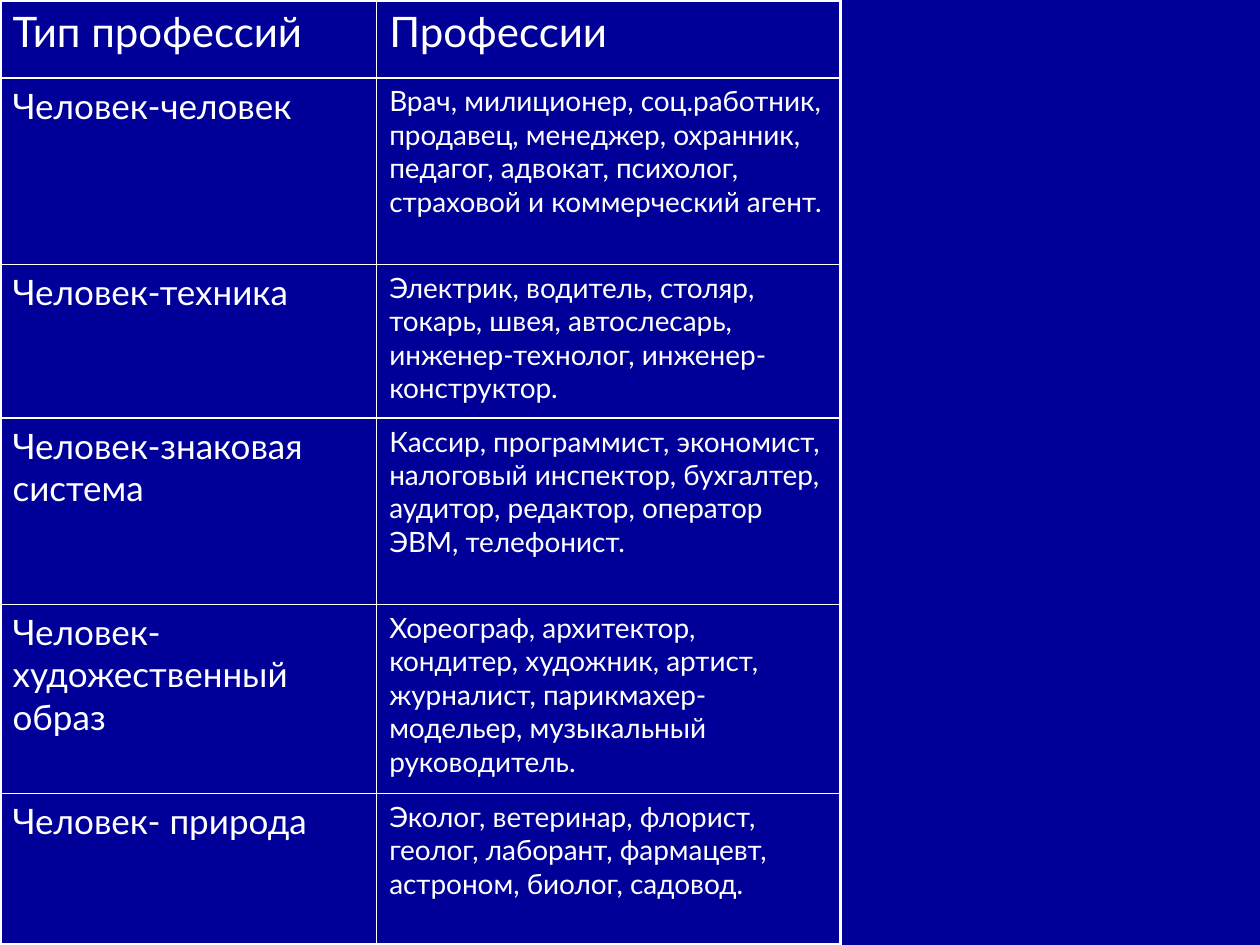
from lxml.etree import SubElement
from pptx import Presentation
from pptx.dml.color import RGBColor
from pptx.oxml.ns import qn
from pptx.util import Inches, Pt

NAVY = RGBColor(0x00, 0x00, 0x99)
WHITE = RGBColor(0xFF, 0xFF, 0xFF)

# The slide is a fine grid of 1000 columns by 750 rows
GRID_COLUMNS, GRID_ROWS = 1000, 750
COLUMN_WIDTHS = [299, 368]
ROW_HEIGHTS = [62, 148, 122, 148, 150, 120]

HEADER = ("Тип профессий", "Профессии")
PROFESSIONS = [
    ("Человек-человек",
     "Врач, милиционер, соц.работник, продавец, менеджер, охранник, "
     "педагог, адвокат, психолог, страховой и коммерческий агент."),
    ("Человек-техника",
     "Электрик, водитель, столяр, токарь, швея, автослесарь, "
     "инженер-технолог, инженер-конструктор."),
    ("Человек-знаковая система",
     "Кассир, программист, экономист, налоговый инспектор, бухгалтер, "
     "аудитор, редактор, оператор ЭВМ, телефонист."),
    ("Человек- художественный образ",
     "Хореограф, архитектор, кондитер, художник, артист, журналист, "
     "парикмахер-модельер, музыкальный руководитель."),
    ("Человек- природа",
     "Эколог, ветеринар, флорист, геолог, лаборант, фармацевт, "
     "астроном, биолог, садовод."),
]


class SlideBuilder:
    """Holds the style and the current slide."""

    font_name = "Lato"
    header_size = 24
    column_sizes = (20, 16)
    outer_line, inner_line = 2.25, 1

    def __init__(self, deck):
        self.column = deck.slide_width / GRID_COLUMNS
        self.row = deck.slide_height / GRID_ROWS
        self.page = deck.slides.add_slide(deck.slide_layouts[6])

    def background(self, color):
        fill = self.page.background.fill
        fill.solid()
        fill.fore_color.rgb = color

    def table(self, rows, widths, heights):
        frame = self.page.shapes.add_table(
            len(rows), len(widths), 0, 0,
            round(sum(widths) * self.column), round(sum(heights) * self.row))
        table = frame.table
        table.first_row = table.horz_banding = False
        for column, width in zip(table.columns, widths):
            column.width = round(width * self.column)
        for row, height in zip(table.rows, heights):
            row.height = round(height * self.row)

        last_row, last_column = len(rows) - 1, len(widths) - 1
        for i, texts in enumerate(rows):
            for j, text in enumerate(texts):
                cell = table.cell(i, j)
                size = self.header_size if i == 0 else self.column_sizes[j]
                self.cell_text(cell, text, size)
                self.cell_borders(cell, {
                    "L": j == 0, "R": j == last_column,
                    "T": i == 0, "B": i == last_row})
                cell.fill.background()

    def cell_text(self, cell, text, size):
        cell.text_frame.text = text
        for span in cell.text_frame.paragraphs[0].runs:
            span.font.name = self.font_name
            span.font.size = Pt(size)
            span.font.color.rgb = WHITE

    def cell_borders(self, cell, outer_sides):
        properties = cell._tc.get_or_add_tcPr()
        for side, is_outer in outer_sides.items():
            width = Pt(self.outer_line if is_outer else self.inner_line)
            line = SubElement(properties, qn(f"a:ln{side}"), w=str(width))
            fill = SubElement(line, qn("a:solidFill"))
            SubElement(fill, qn("a:srgbClr"), val=str(WHITE))


def main():
    deck = Presentation()
    deck.slide_width, deck.slide_height = Inches(10), Inches(7.5)

    builder = SlideBuilder(deck)
    builder.background(NAVY)
    # Types of professions with examples
    builder.table([HEADER, *PROFESSIONS], COLUMN_WIDTHS, ROW_HEIGHTS)

    deck.save("out.pptx")


if __name__ == "__main__":
    main()
